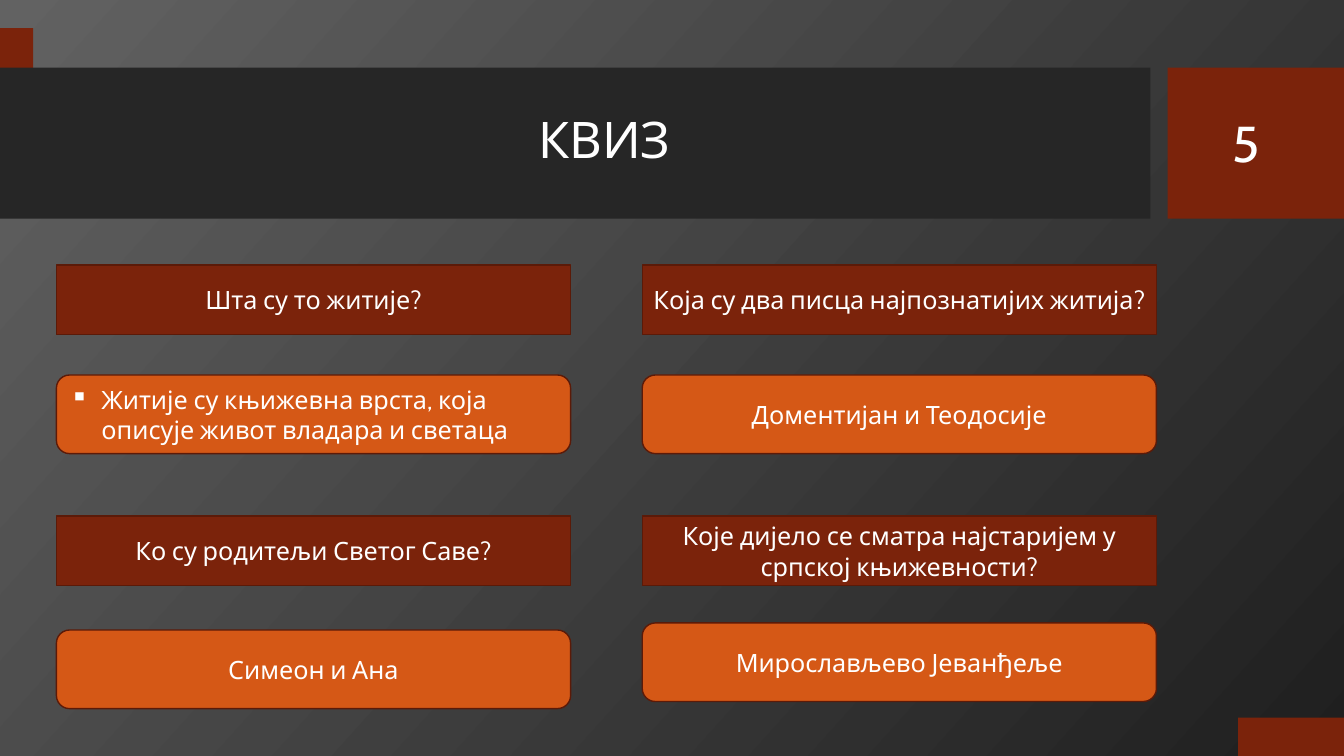
from dataclasses import dataclass

import pptx
import pptx.dml.color
import pptx.enum.shapes
import pptx.enum.text
import pptx.oxml.ns
import pptx.util
from lxml import etree

Inches = pptx.util.Inches
Pt = pptx.util.Pt
Kind = pptx.enum.shapes.MSO_SHAPE
Align = pptx.enum.text.PP_ALIGN

FONT = "Cabin"
WHITE, DARK = "FFFFFF", "262626"
RED, ORANGE, EDGE = "7B230B", "D55816", "5B1A08"
COLS = (0.56, 6.37)
WIDTH = 5.1


@dataclass
class Panel:
    left: float
    top: float
    width: float
    height: float
    fill: str


@dataclass
class Card:
    col: int
    top: float
    text: str
    answer: bool = False
    bullet: bool = False


PANELS = [
    Panel(12.28, 7.12, 1.05, 0.38, RED),
    Panel(0, 0.28, 0.33, 0.83, RED),
    Panel(0, 0.67, 11.41, 1.5, DARK),
    Panel(11.58, 0.67, 1.75, 1.5, RED),
]

CARDS = [
    Card(0, 2.63, "Шта су то житије?"),
    Card(1, 2.63, "Која су два писца најпознатијих житија?"),
    Card(0, 5.12, "Ко су родитељи Светог Саве?"),
    Card(1, 5.12, "Које дијело се сматра најстаријем у српској књижевности?"),
    Card(0, 3.72, "Житије су књижевна врста, која описује живот владара и светаца",
         answer=True, bullet=True),
    Card(1, 3.72, "Доментијан и Теодосије", answer=True),
    Card(0, 6.25, "Симеон и Ана", answer=True),
    Card(1, 6.18, "Мирослављево Јеванђеље", answer=True),
]


def color(code: str) -> pptx.dml.color.RGBColor:
    return pptx.dml.color.RGBColor.from_string(code)


def write(shape, text: str, size: float):
    """Put one centred line of text in a shape and return its paragraph."""
    frame = shape.text_frame
    frame.word_wrap = True
    frame.vertical_anchor = pptx.enum.text.MSO_ANCHOR.MIDDLE
    para = frame.paragraphs[0]
    para.alignment = Align.CENTER
    run = para.add_run()
    run.text = text
    run.font.name = FONT
    run.font.size = Pt(size)
    run.font.color.rgb = color(WHITE)
    return para


def add_mark(para) -> None:
    """Turn a paragraph into a left-aligned bullet with a hanging indent."""
    para.alignment = Align.LEFT
    props = para._p.get_or_add_pPr()
    props.set("marL", str(Inches(0.31)))
    props.set("indent", str(-Inches(0.31)))
    mark = etree.SubElement(props, pptx.oxml.ns.qn("a:buChar"))
    mark.set("char", "▪")


def add_box(slide, kind, box: Panel):
    shape = slide.shapes.add_shape(
        kind, Inches(box.left), Inches(box.top),
        Inches(box.width), Inches(box.height))
    shape.shadow.inherit = False
    shape.fill.solid()
    shape.fill.fore_color.rgb = color(box.fill)
    shape.line.fill.background()
    return shape


def add_card(slide, card: Card) -> None:
    kind = Kind.ROUNDED_RECTANGLE if card.answer else Kind.RECTANGLE
    high, fill = (0.78, ORANGE) if card.answer else (0.69, RED)
    shape = add_box(slide, kind,
                    Panel(COLS[card.col], card.top, WIDTH, high, fill))
    shape.line.color.rgb = color(EDGE)
    shape.line.width = Pt(1)
    para = write(shape, card.text, 18)
    if card.bullet:
        add_mark(para)


def add_label(slide, left: float, width: float, text: str):
    box = slide.shapes.add_textbox(
        Inches(left), Inches(0.82), Inches(width), Inches(1.18))
    return write(box, text, 36)


def main() -> None:
    deck = pptx.Presentation()
    deck.slide_width = Inches(13.33)
    deck.slide_height = Inches(7.5)
    slide = deck.slides.add_slide(deck.slide_layouts[6])

    # Background, light at top left
    back = slide.background.fill
    back.gradient()
    back.gradient_angle = 360 - 42
    for stop, code in zip(back.gradient_stops, ("626262", "1F1F1F")):
        stop.color.rgb = color(code)

    # Header band and accents
    for panel in PANELS:
        add_box(slide, Kind.RECTANGLE, panel)

    # Title and slide number
    add_label(slide, 0.74, 10.51, "КВИЗ").line_spacing = 0.9
    add_label(slide, 11.73, 1.26, "5")

    # Questions and answers
    for card in CARDS:
        add_card(slide, card)

    deck.save("out.pptx")


if __name__ == "__main__":
    main()
